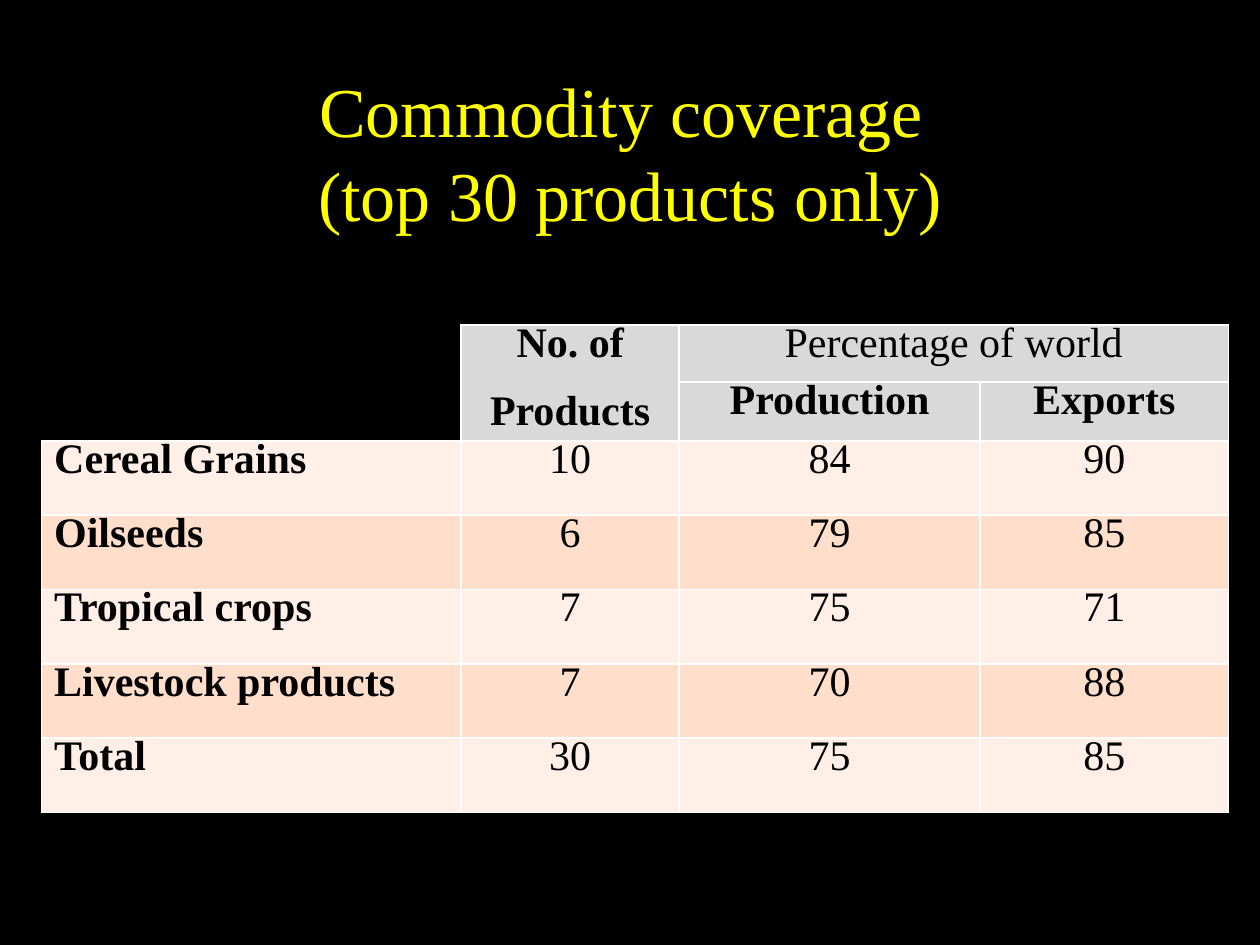
"""Build a slide with a table of commodity coverage for the top 30 products."""
from lxml import etree
from pptx import Presentation
from pptx.dml.color import RGBColor
from pptx.enum.text import MSO_ANCHOR, PP_ALIGN
from pptx.oxml.ns import qn
from pptx.util import Inches, Pt

LEFT, CENTER, MIDDLE = PP_ALIGN.LEFT, PP_ALIGN.CENTER, MSO_ANCHOR.MIDDLE
FONT = "Times New Roman"
BLACK, WHITE, YELLOW, GREY = "000000", "FFFFFF", "FFFF00", "D9D9D9"
BANDS = ["FFEFE7", "FFDECC"]
NO_STYLE = "{2D5ABB26-0587-4C30-8999-92F81FD0307C}"
COLS = [3.33, 1.73, 2.39, 1.97]
ROWS = [0.45] * 2 + [0.59] * 5
DATA = [
    ["", "No. of", "Percentage of world", ""],
    ["", "Products", "Production", "Exports"],
    ["Cereal Grains", "10", "84", "90"],
    ["Oilseeds", "6", "79", "85"],
    ["Tropical crops", "7", "75", "71"],
    ["Livestock products", "7", "70", "88"],
    ["Total", "30", "75", "85"],
]
EDGES = {(0, 0): "R", (1, 0): "R", (0, 1): "LRT", (1, 1): "LRB"}


def write(tf, text, size=24, color=BLACK, bold=False, align=CENTER, tight=False):
    tf.text = text
    p = tf.paragraphs[0]
    p.alignment = align
    if tight:
        p.line_spacing = 0.7
        before = etree.SubElement(p._p.get_or_add_pPr(), qn("a:spcBef"))
        etree.SubElement(before, qn("a:spcPct"), val="20000")
    for r in p.runs:
        r.font.name, r.font.size, r.font.bold = FONT, Pt(size), bold
        r.font.color.rgb = RGBColor.from_string(color)


def add_border(cell, side, color=WHITE, width=1):
    ln = etree.SubElement(cell._tc.get_or_add_tcPr(), qn(f"a:ln{side}"), w=str(Pt(width)))
    fill = etree.SubElement(ln, qn("a:solidFill"))
    etree.SubElement(fill, qn("a:srgbClr"), val=color)


prs = Presentation()
prs.slide_width, prs.slide_height = Inches(10), Inches(7.5)
s = prs.slides.add_slide(prs.slide_layouts[5])
s.background.fill.solid()
s.background.fill.fore_color.rgb = RGBColor.from_string(BLACK)

title = s.shapes.title
title.left, title.top = Inches(0.5), Inches(0.58)
title.width, title.height = Inches(9), Inches(1.25)
title.text_frame.vertical_anchor = MIDDLE
write(title.text_frame, "Commodity coverage \v(top 30 products only)", size=40, color=YELLOW)

table = s.shapes.add_table(len(ROWS), len(COLS), Inches(0.33), Inches(2.58),
                           Inches(sum(COLS)), Inches(sum(ROWS))).table
table.first_row = table.horz_banding = False
table._tbl.tblPr.find(qn("a:tableStyleId")).text = NO_STYLE
for col, width in zip(table.columns, COLS):
    col.width = Inches(width)
for row, height in zip(table.rows, ROWS):
    row.height = Inches(height)
table.cell(0, 2).merge(table.cell(0, 3))

for i, values in enumerate(DATA):
    for j, text in enumerate(values):
        cell = table.cell(i, j)
        for side in EDGES.get((i, j), "LRTB"):
            add_border(cell, side)
        if i < 2 and j == 0:
            cell.fill.background()
            continue
        cell.fill.solid()
        cell.fill.fore_color.rgb = RGBColor.from_string(GREY if i < 2 else BANDS[i % 2])
        if text:
            write(cell.text_frame, text, align=CENTER if j else LEFT,
                  bold=j == 0 or (i < 2 and text != "Percentage of world"),
                  tight=text != "Products")

prs.save("out.pptx")
